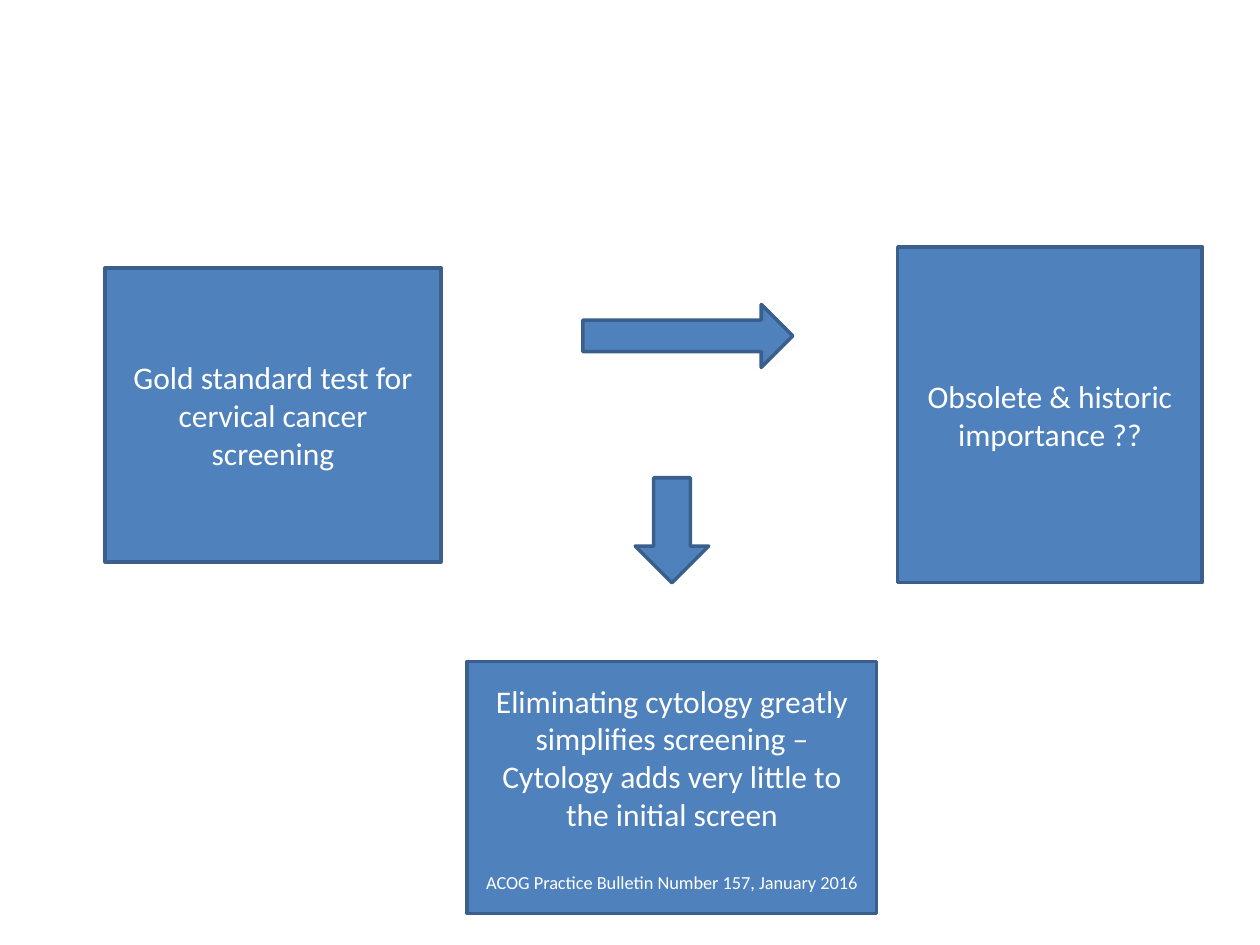
from pptx import Presentation
from pptx.dml.color import RGBColor
from pptx.enum.shapes import MSO_SHAPE
from pptx.enum.text import MSO_ANCHOR, PP_ALIGN
from pptx.util import Inches, Pt

THEME = {
    "fill": RGBColor.from_string("4F81BD"),
    "line": RGBColor.from_string("3A5F8C"),
    "text": RGBColor.from_string("FFFFFF"),
    "font": "Calibri",
    "statement": Pt(18),
    "citation": Pt(10.5),
    "outline": Pt(2),
    "citation_gap": Pt(22),
}

deck = Presentation()
deck.slide_width, deck.slide_height = Inches(10), Inches(7.5)
slide = deck.slides.add_slide(deck.slide_layouts[6])

COLUMN = deck.slide_width / 240
ROW = deck.slide_height / 180

flow = [
    (MSO_SHAPE.RECTANGLE, (20, 51, 64, 56),
     [("Gold standard test for cervical cancer screening", "statement")]),
    (MSO_SHAPE.RIGHT_ARROW, (111, 58, 40, 12), []),
    (MSO_SHAPE.RECTANGLE, (171, 47, 58, 64),
     [("Obsolete & historic importance ??", "statement")]),
    (MSO_SHAPE.RECTANGLE, (89, 126, 78, 48),
     [("Eliminating cytology greatly simplifies screening – "
       "Cytology adds very little to the initial screen", "statement"),
      ("ACOG Practice Bulletin Number 157, January 2016", "citation")]),
    (MSO_SHAPE.DOWN_ARROW, (121, 91, 14, 20), []),
]

for outline, (column, row, columns, rows), statements in flow:
    step = slide.shapes.add_shape(
        outline, round(column * COLUMN), round(row * ROW),
        round(columns * COLUMN), round(rows * ROW))
    step.shadow.inherit = False
    step.fill.solid()
    step.fill.fore_color.rgb = THEME["fill"]
    step.line.color.rgb = THEME["line"]
    step.line.width = THEME["outline"]
    frame = step.text_frame
    frame.word_wrap = True
    frame.vertical_anchor = MSO_ANCHOR.MIDDLE
    for position, (wording, level) in enumerate(statements):
        paragraph = frame.add_paragraph() if position else frame.paragraphs[0]
        paragraph.alignment = PP_ALIGN.CENTER
        if position:
            paragraph.space_before = THEME["citation_gap"]
        run = paragraph.add_run()
        run.text = wording
        for attribute, value in {"name": THEME["font"], "size": THEME[level]}.items():
            setattr(run.font, attribute, value)
        run.font.color.rgb = THEME["text"]

deck.save("out.pptx")
